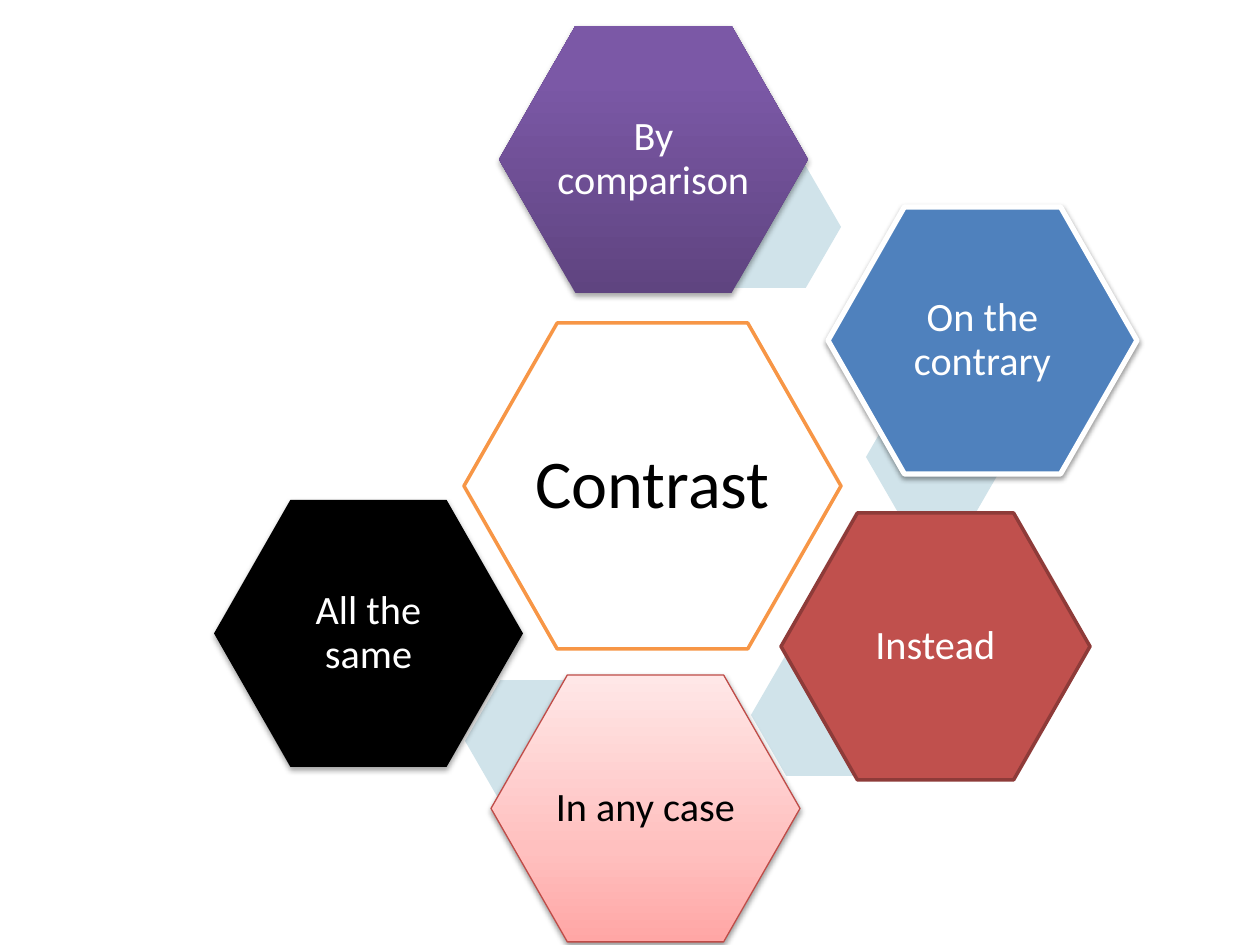
"""Build a slide with a hexagon diagram of contrast phrases."""
import pptx
import pptx.dml.color
import pptx.enum.shapes
import pptx.enum.text
import pptx.oxml
import pptx.oxml.ns
import pptx.util

COLOURS = {
    "white": "FFFFFF", "black": "000000", "orange": "F79646", "blue": "4F81BD",
    "red": "C0504D", "dark red": "8E3B39", "rose": "BF4C48", "pale blue": "D0E3EA",
    "purple bottom": "5F4480", "purple middle": "7B58A6", "purple top": "7C57A8",
    "pink bottom": "FFA6A5", "pink middle": "FFC0BF", "pink top": "FFE7E7",
}
PURPLE = [(0, "purple bottom"), (80, "purple middle"), (100, "purple top")]
PINK = [(0, "pink bottom"), (35, "pink middle"), (100, "pink top")]
SOFT_SHADOW = {"alpha": 35, "distance": 1.8}
STRONG_SHADOW = {"alpha": 38, "distance": 1.6}

PHRASES = [
    {"text": "By comparison", "at": (499, 26), "accent": (699, 166), "fill": PURPLE,
     "shadow": SOFT_SHADOW},
    {"text": "On the contrary", "at": (828, 207), "accent": (866, 396), "fill": "blue",
     "line": ("white", 3), "shadow": STRONG_SHADOW},
    {"text": "Instead", "at": (781, 513), "accent": (751, 654), "fill": "red",
     "line": ("dark red", 2)},
    {"text": "In any case", "at": (491, 675), "accent": (465, 680), "fill": PINK,
     "line": ("rose", 0.75), "shadow": STRONG_SHADOW, "colour": "black"},
    {"text": "All the same", "at": (214, 500), "fill": "black", "shadow": SOFT_SHADOW},
]
TOPIC = {"text": "Contrast", "at": (464, 323), "fill": "white", "line": ("orange", 2)}

SLIDE_SIZE = (1260, 945)
TOPIC_SIZE, TOPIC_TEXT_SIZE = (377, 326), (252, 218)
PHRASE_SIZE, PHRASE_TEXT_SIZE = (309, 267), (207, 179)
ACCENT_SIZE = (142, 122)


def px(value):
    return pptx.util.Emu(round(value * 914400 / 126))


def rgb(name):
    return pptx.dml.color.RGBColor.from_string(COLOURS[name])


def xml(markup):
    return pptx.oxml.parse_xml(markup.replace(" ", f" {pptx.oxml.ns.nsdecls('a')} ", 1))


def fill_gradient(shape, stops):
    shape.fill.gradient()
    shape.fill.gradient_angle = 90
    stop_list = shape._element.spPr.find(".//" + pptx.oxml.ns.qn("a:gsLst"))
    stop_list.clear()
    for position, colour in stops:
        stop_list.append(xml(
            f'<a:gs pos="{position * 1000}"><a:srgbClr val="{COLOURS[colour]}"/></a:gs>'))


def add_shadow(shape, alpha, distance):
    effects = shape._element.spPr.find(pptx.oxml.ns.qn("a:effectLst"))
    effects.append(xml(
        f'<a:outerShdw blurRad="{pptx.util.Pt(3.1)}" dist="{pptx.util.Pt(distance)}" '
        f'dir="5400000" rotWithShape="0"><a:srgbClr val="{COLOURS["black"]}">'
        f'<a:alpha val="{alpha * 1000}"/></a:srgbClr></a:outerShdw>'))


def add_hexagon(shapes, at, size, fill, line=None, shadow=None, bend=0.286):
    shape = shapes.add_shape(
        pptx.enum.shapes.MSO_SHAPE.HEXAGON, *map(px, (*at, *size)))
    shape.adjustments[0] = bend
    shape.shadow.inherit = False
    if isinstance(fill, list):
        fill_gradient(shape, fill)
    else:
        shape.fill.solid()
        shape.fill.fore_color.rgb = rgb(fill)
    if line:
        colour, width = line
        shape.line.color.rgb = rgb(colour)
        shape.line.width = pptx.util.Pt(width)
    else:
        shape.line.fill.background()
    if shadow:
        add_shadow(shape, **shadow)


def add_text(shapes, text, *, at, within, size, points, colour, inset):
    left, top = (start + (outer - inner) / 2
                 for start, outer, inner in zip(at, within, size))
    frame = shapes.add_textbox(*map(px, (left, top, *size))).text_frame
    frame.word_wrap = True
    frame.vertical_anchor = pptx.enum.text.MSO_ANCHOR.MIDDLE
    frame.margin_left = frame.margin_right = px(inset)
    frame.margin_top = frame.margin_bottom = px(inset)
    paragraph = frame.paragraphs[0]
    paragraph.alignment = pptx.enum.text.PP_ALIGN.CENTER
    paragraph.line_spacing = 0.9
    run = paragraph.add_run()
    run.text = text
    run.font.name = "Calibri"
    run.font.size = pptx.util.Pt(points)
    run.font.color.rgb = rgb(colour)


def main():
    presentation = pptx.Presentation()
    presentation.slide_width, presentation.slide_height = map(px, SLIDE_SIZE)
    slide = presentation.slides.add_slide(presentation.slide_layouts[6])
    shapes = slide.shapes.add_group_shape().shapes

    add_hexagon(shapes, TOPIC["at"], TOPIC_SIZE, TOPIC["fill"], TOPIC["line"])
    add_text(shapes, TOPIC["text"], at=TOPIC["at"], within=TOPIC_SIZE,
             size=TOPIC_TEXT_SIZE, points=39, colour="black", inset=6)
    for phrase in PHRASES:
        if "accent" in phrase:
            add_hexagon(shapes, phrase["accent"], ACCENT_SIZE, "pale blue", bend=0.289)
        add_hexagon(shapes, phrase["at"], PHRASE_SIZE, phrase["fill"],
                    phrase.get("line"), phrase.get("shadow"))
        add_text(shapes, phrase["text"], at=phrase["at"], within=PHRASE_SIZE,
                 size=PHRASE_TEXT_SIZE, points=23,
                 colour=phrase.get("colour", "white"), inset=4)

    presentation.save("out.pptx")


if __name__ == "__main__":
    main()
